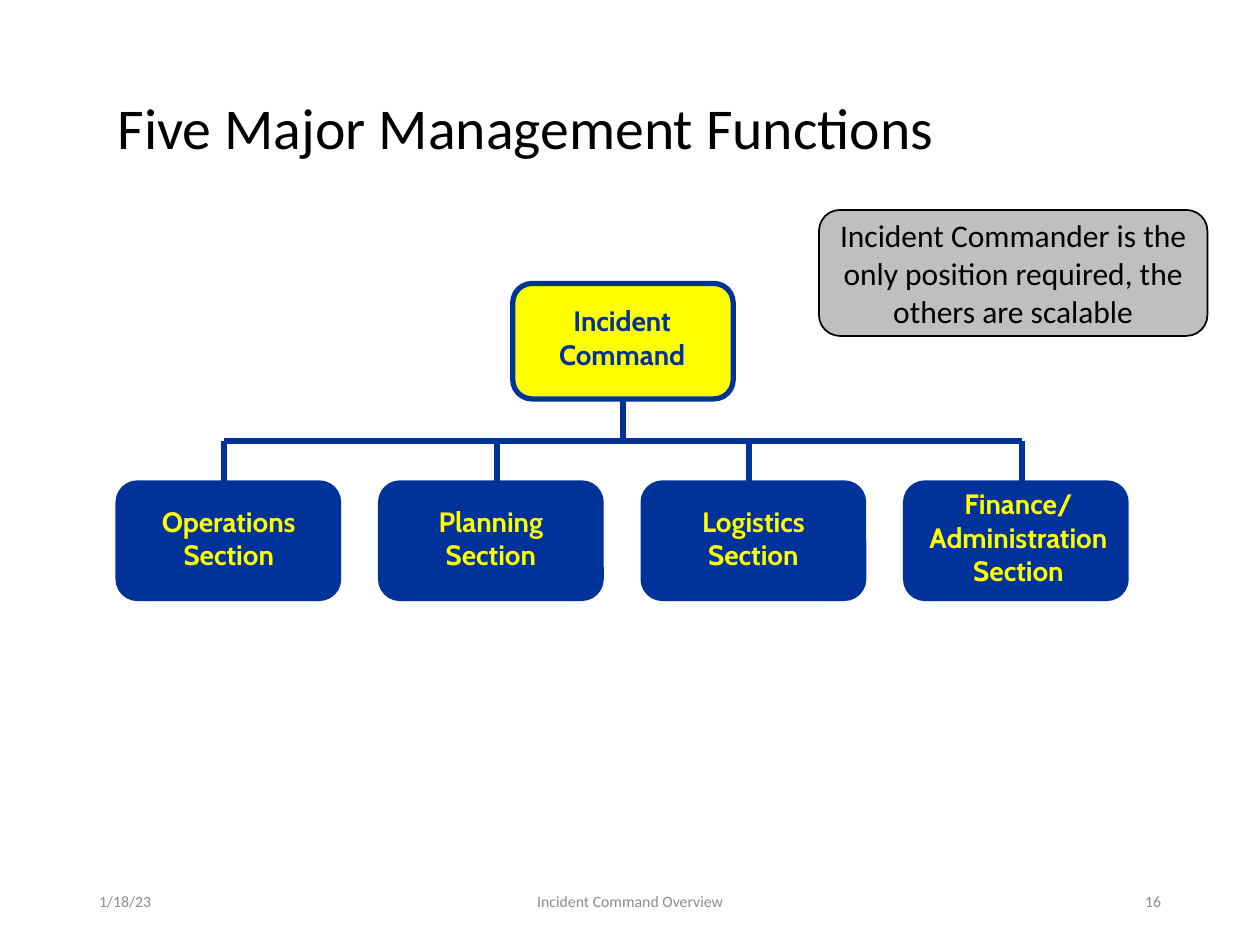
from dataclasses import dataclass

from lxml.etree import SubElement
from pptx import Presentation
from pptx.dml.color import RGBColor
from pptx.enum.shapes import MSO_CONNECTOR as Connector, MSO_SHAPE as Preset
from pptx.enum.text import MSO_ANCHOR as Anchor, PP_ALIGN as Align
from pptx.oxml.ns import qn
from pptx.shapes.autoshape import Shape
from pptx.slide import Slide
from pptx.text.text import TextFrame
from pptx.util import Pt

NAVY = RGBColor(0x00, 0x33, 0x99)
YELLOW = RGBColor(0xFF, 0xFF, 0x00)
GREY = RGBColor(0xBF, 0xBF, 0xBF)
FOOTER_GREY = RGBColor(0x8C, 0x8C, 0x8C)
BLACK = RGBColor(0x00, 0x00, 0x00)

BOX_WIDTH, BOX_HEIGHT = 126, 66
SECTION_LEFT, SECTION_TOP, SECTION_PITCH = 67.5, 276, 150
COMMAND_LEFT, COMMAND_TOP = 293, 162
BUS_Y = 252


@dataclass(frozen=True)
class Area:
    left: float
    top: float
    width: float
    height: float

    def in_points(self) -> tuple[Pt, Pt, Pt, Pt]:
        return Pt(self.left), Pt(self.top), Pt(self.width), Pt(self.height)


@dataclass(frozen=True)
class Unit:
    name: str
    box: Area
    label: Area
    fill: RGBColor = NAVY
    color: RGBColor = YELLOW


@dataclass(frozen=True)
class Footer:
    text: str
    area: Area
    align: Align


def section(index: int, name: str, label_left: float, label_width: float,
            label_top: float = 284.5, label_height: float = 46) -> Unit:
    box = Area(SECTION_LEFT + index * SECTION_PITCH, SECTION_TOP, BOX_WIDTH, BOX_HEIGHT)
    return Unit(name, box, Area(label_left, label_top, label_width, label_height))


SECTIONS = [
    section(0, "Operations Section", 78.5, 104.5),
    section(1, "Planning Section", 232.5, 96),
    section(2, "Logistics Section", 382.5, 96),
    section(3, "Finance/ Administration Section", 512.5, 139, 274.5, 65),
]
COMMAND = Unit(
    "Incident Command",
    Area(COMMAND_LEFT, COMMAND_TOP, BOX_WIDTH, BOX_HEIGHT),
    Area(307.5, 170, 96, 46),
    YELLOW,
    NAVY,
)
DROP_XS = [128, 284, 428, 584]
FOOTERS = [
    Footer("1/18/23", Area(49.5, 500.5, 162, 28.75), Align.LEFT),
    Footer("Incident Command Overview", Area(238.5, 500.5, 243, 28.75), Align.CENTER),
    Footer("16", Area(508.5, 500.5, 162, 28.75), Align.RIGHT),
]


def write(frame: TextFrame, text: str, *, size: float, color: RGBColor,
          font: str = "Calibri", bold: bool = False, align: Align = Align.CENTER,
          anchor: Anchor = Anchor.MIDDLE, line_spacing: float = 1.0) -> None:
    frame.word_wrap = True
    frame.vertical_anchor = anchor
    paragraph = frame.paragraphs[0]
    paragraph.alignment = align
    paragraph.line_spacing = line_spacing
    run = paragraph.add_run()
    run.text = text
    run.font.name = font
    run.font.size = Pt(size)
    run.font.bold = bold
    run.font.color.rgb = color


def add_rounded_box(slide: Slide, area: Area, fill: RGBColor,
                    outline: RGBColor, weight: float) -> Shape:
    box = slide.shapes.add_shape(Preset.ROUNDED_RECTANGLE, *area.in_points())
    box.shadow.inherit = False
    box.fill.solid()
    box.fill.fore_color.rgb = fill
    box.line.color.rgb = outline
    box.line.width = Pt(weight)
    return box


def add_link(slide: Slide, x1: float, y1: float, x2: float, y2: float) -> None:
    link = slide.shapes.add_connector(Connector.STRAIGHT, Pt(x1), Pt(y1), Pt(x2), Pt(y2))
    link.line.color.rgb = NAVY
    link.line.width = Pt(3)
    SubElement(link._element.spPr, qn("a:effectLst"))


def add_unit(slide: Slide, unit: Unit) -> None:
    add_rounded_box(slide, unit.box, unit.fill, NAVY, 3)
    label = slide.shapes.add_textbox(*unit.label.in_points())
    write(label.text_frame, unit.name, size=16, color=unit.color,
          font="Cabin", bold=True, anchor=Anchor.TOP)


def add_footer(slide: Slide, footer: Footer) -> None:
    holder = slide.shapes.add_textbox(*footer.area.in_points())
    write(holder.text_frame, footer.text, size=9, color=FOOTER_GREY, align=footer.align)


def add_title(slide: Slide, text: str, area: Area) -> None:
    title = slide.shapes.title
    title.left, title.top, title.width, title.height = area.in_points()
    write(title.text_frame, text, size=33, color=BLACK, align=Align.LEFT, line_spacing=0.9)


def main() -> None:
    deck = Presentation()
    deck.slide_width, deck.slide_height = Pt(720), Pt(540)
    slide = deck.slides.add_slide(deck.slide_layouts[5])

    add_title(slide, "Five Major Management Functions", Area(60, 30, 600, 90))
    for footer in FOOTERS:
        add_footer(slide, footer)

    for x in DROP_XS:
        add_link(slide, x, BUS_Y, x, SECTION_TOP + 5)
    command_x = COMMAND_LEFT + BOX_WIDTH / 2
    add_link(slide, command_x, COMMAND_TOP + BOX_HEIGHT - 6, command_x, BUS_Y)
    for unit in [*SECTIONS, COMMAND]:
        add_unit(slide, unit)
    add_link(slide, DROP_XS[0], BUS_Y, DROP_XS[-1], BUS_Y)

    callout = add_rounded_box(slide, Area(468, 120, 222, 72), GREY, BLACK, 1)
    write(callout.text_frame,
          "Incident Commander is the only position required, the others are scalable",
          size=18, color=BLACK)

    deck.save("out.pptx")


if __name__ == "__main__":
    main()
